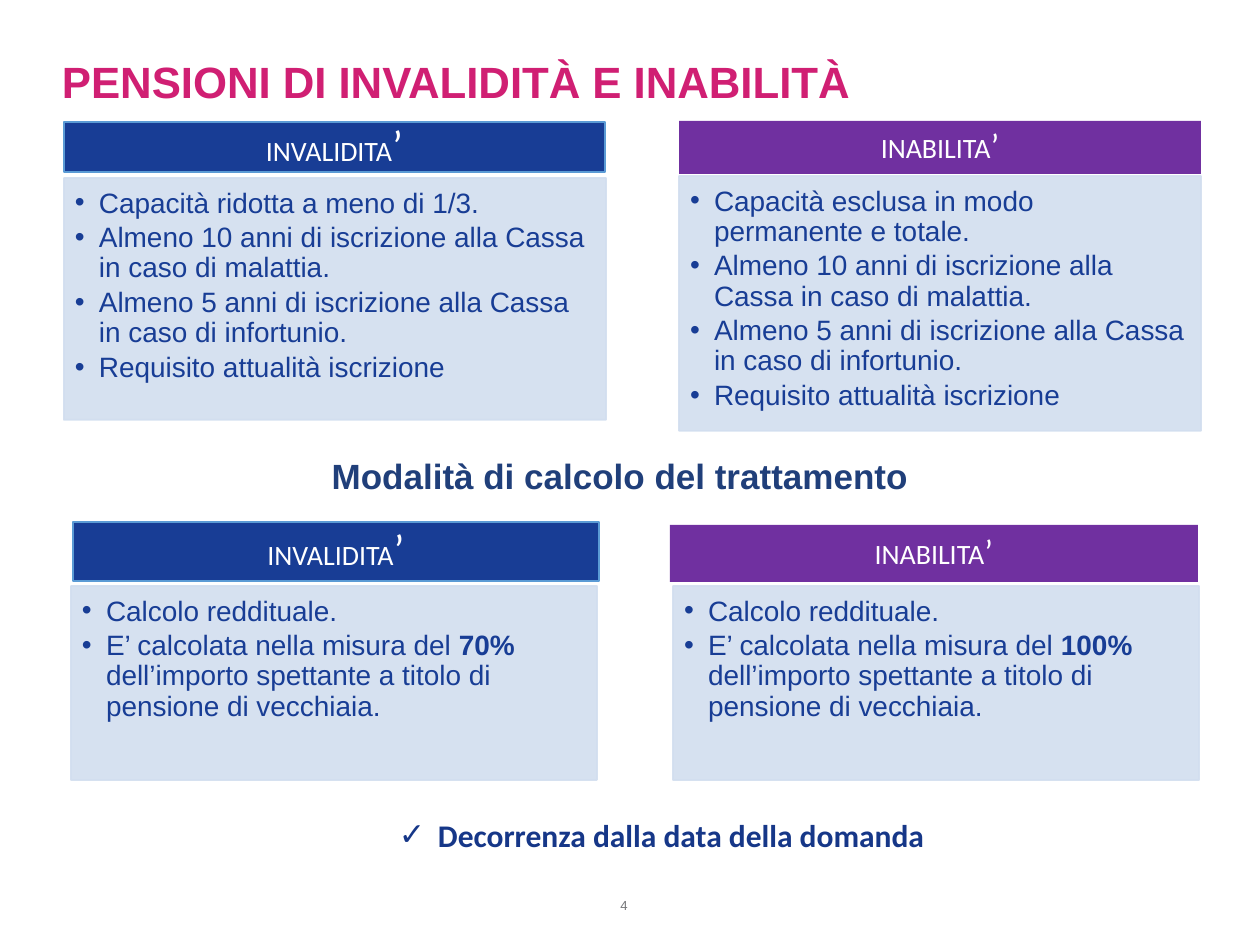
from dataclasses import dataclass

from lxml.etree import SubElement
from pptx import Presentation
from pptx.dml.color import RGBColor as Rgb
from pptx.enum.shapes import MSO_SHAPE as Shape
from pptx.enum.text import MSO_ANCHOR as Anchor, PP_ALIGN as Align
from pptx.oxml.ns import qn
from pptx.util import Emu, Pt

PX = 914400 / 126


@dataclass(frozen=True)
class Theme:
    heading_font: str = "Arial"
    label_font: str = "Calibri"
    magenta: str = "D01F73"
    blue: str = "183D95"
    purple: str = "7030A0"
    border: str = "5B9BD5"
    panel: str = "D2DEEF"
    navy: str = "203F7A"
    ink: str = "163788"
    grey: str = "76777A"
    white: str = "FFFFFF"
    title_size: float = 25
    subtitle_size: float = 20
    note_size: float = 18
    body_size: float = 16
    number_size: float = 7.5


THEME = Theme()

REQUIREMENTS = [
    "Almeno 10 anni di iscrizione alla Cassa in caso di malattia.",
    "Almeno 5 anni di iscrizione alla Cassa in caso di infortunio.",
    "Requisito attualità iscrizione",
]


def calculation(share):
    return [
        "Calcolo reddituale.",
        f"E’ calcolata nella misura del *{share}* dell’importo spettante "
        "a titolo di pensione di vecchiaia.",
    ]


INVALIDITY = ("INVALIDITA", 25, THEME.blue, THEME.border)
INABILITY = ("INABILITA", 20, THEME.purple, None)

CARDS = [
    (INVALIDITY, (64, 122, 541, 50), (64, 178, 542, 242),
     ["Capacità ridotta a meno di 1/3.", *REQUIREMENTS]),
    (INABILITY, (679, 121, 522, 53), (679, 176, 522, 255),
     ["Capacità esclusa in modo permanente e totale.", *REQUIREMENTS]),
    (INVALIDITY, (73, 522, 526, 59), (71, 586, 526, 194), calculation("70%")),
    (INABILITY, (670, 525, 528, 57), (673, 586, 526, 194), calculation("100%")),
]


def px(length):
    return Emu(round(length * PX))


def style(font, name, size, color, bold=False):
    font.name, font.size, font.bold = name, Pt(size), bold
    font.color.rgb = Rgb.from_string(color)


def set_insets(frame, left, top, right, bottom):
    frame.margin_left, frame.margin_top = px(left), px(top)
    frame.margin_right, frame.margin_bottom = px(right), px(bottom)


def set_bullet(para, char, indent):
    props = para._p.get_or_add_pPr()
    props.set("marL", str(px(indent)))
    props.set("indent", str(-px(indent)))
    SubElement(props, qn("a:buFont")).set("typeface", "Arial")
    SubElement(props, qn("a:buChar")).set("char", char)


def add_panel(page, box, fill, line=None, alpha=None):
    panel = page.shapes.add_shape(Shape.RECTANGLE, *map(px, box))
    panel.shadow.inherit = False
    panel.fill.solid()
    panel.fill.fore_color.rgb = Rgb.from_string(fill)
    if line:
        panel.line.color.rgb = Rgb.from_string(line)
        panel.line.width = Pt(1)
    else:
        panel.line.fill.background()
    if alpha:
        for color in panel._element.spPr.iter(qn("a:srgbClr")):
            SubElement(color, qn("a:alpha")).set("val", str(alpha * 1000))
    panel.text_frame.word_wrap = True
    return panel.text_frame


def add_header(page, box, label, mark_size, fill, line):
    frame = add_panel(page, box, fill, line)
    set_insets(frame, 15, 9, 15, 9)
    frame.vertical_anchor = Anchor.MIDDLE
    para = frame.paragraphs[0]
    para.alignment, para.line_spacing = Align.CENTER, 0.9
    for text, size in ((label, THEME.body_size), ("’", mark_size)):
        span = para.add_run()
        span.text = text
        style(span.font, THEME.label_font, size, THEME.white)


def add_body(page, box, items):
    frame = add_panel(page, box, THEME.panel, THEME.panel, alpha=90)
    set_insets(frame, 11, 11, 15, 18)
    frame.vertical_anchor = Anchor.TOP
    frame.text = "\n".join(items)
    for para, item in zip(frame.paragraphs, items):
        para.text = ""
        para.alignment, para.line_spacing = Align.LEFT, 0.9
        para.space_after = Pt(2.5)
        set_bullet(para, "•", 24)
        for index, text in enumerate(item.split("*")):
            span = para.add_run()
            span.text = text
            style(span.font, THEME.heading_font, THEME.body_size, THEME.blue,
                  bold=index % 2 == 1)


def add_card(page, kind, header_box, body_box, items):
    add_header(page, header_box, *kind)
    add_body(page, body_box, items)


def add_label(page, box, text, name, size, color, bold=True,
              insets=(0, 0, 13, 6), align=Align.LEFT, bullet=None):
    frame = page.shapes.add_textbox(*map(px, box)).text_frame
    frame.word_wrap = True
    set_insets(frame, *insets)
    frame.text = text
    para = frame.paragraphs[0]
    para.alignment = align
    if bullet:
        set_bullet(para, bullet, 39)
    style(para.runs[0].font, name, size, color, bold)
    return frame


def add_title(page, box):
    frame = add_label(page, box, "PENSIONI DI INVALIDITÀ E INABILITÀ",
                      THEME.heading_font, THEME.title_size, THEME.magenta,
                      insets=(0, 0, 0, 0))
    frame.paragraphs[0].line_spacing = Pt(30)


def add_subtitle(page, box):
    add_label(page, box, "Modalità di calcolo del trattamento",
              THEME.heading_font, THEME.subtitle_size, THEME.navy,
              align=Align.CENTER)


def add_note(page, box):
    frame = add_label(page, box, "Decorrenza dalla data della domanda",
                      THEME.label_font, THEME.note_size, THEME.ink,
                      insets=(13, 6, 13, 6), bullet="✓")
    frame.word_wrap = False


def add_page_number(page, box):
    frame = add_label(page, box, "4", THEME.heading_font, THEME.number_size,
                      THEME.grey, bold=False, align=Align.CENTER)
    frame.vertical_anchor = Anchor.MIDDLE


def main():
    deck = Presentation()
    deck.slide_width, deck.slide_height = px(1260), px(945)
    page = deck.slides.add_slide(deck.slide_layouts[6])
    add_title(page, (62, 55, 1135, 73))
    for card in CARDS:
        add_card(page, *card)
    add_subtitle(page, (322, 454, 609, 45))
    add_note(page, (386, 810, 556, 50))
    add_page_number(page, (563, 883, 135, 50))
    deck.save("out.pptx")


if __name__ == "__main__":
    main()
